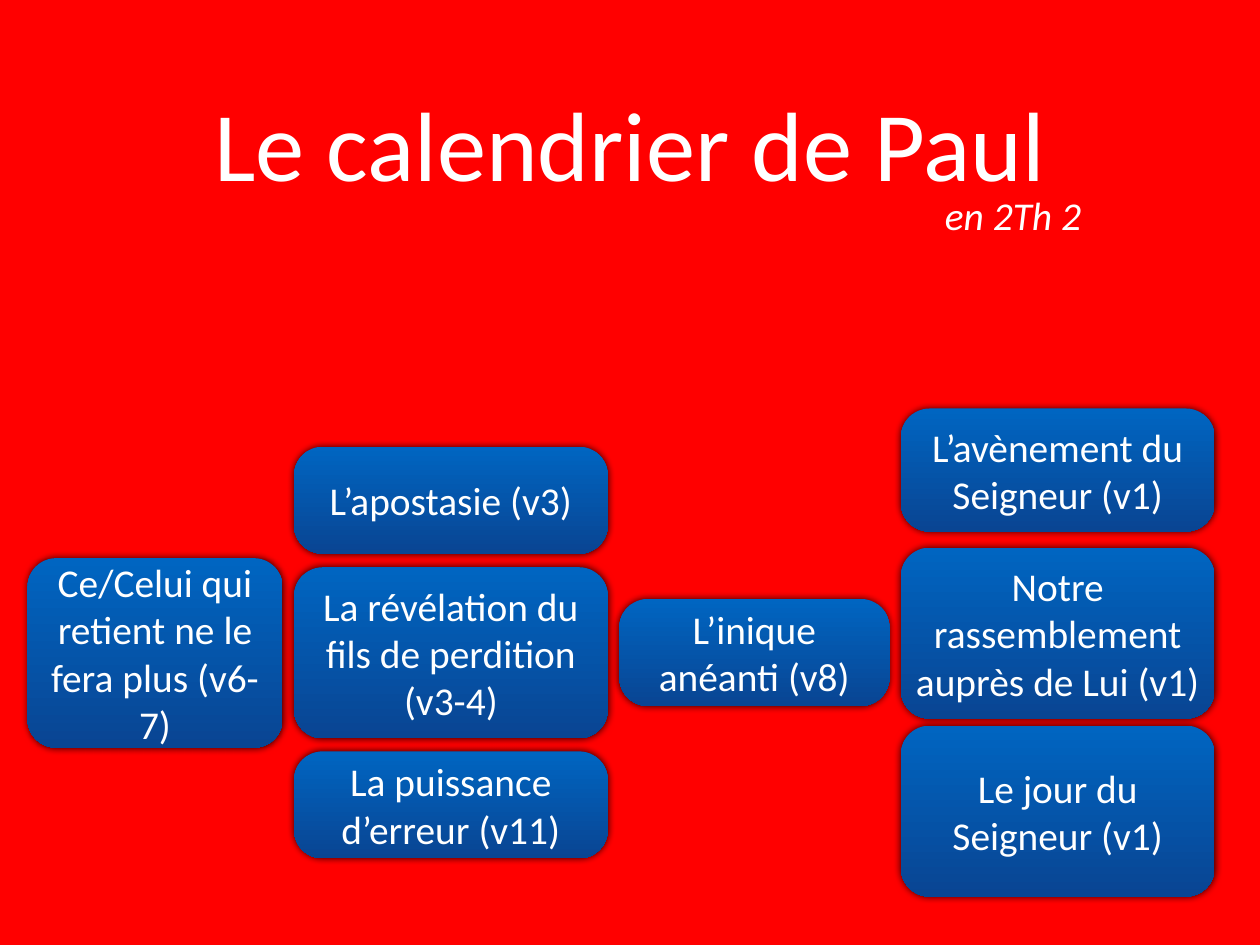
from lxml import etree
from pptx import Presentation
from pptx.dml.color import RGBColor
from pptx.enum.shapes import MSO_SHAPE
from pptx.enum.text import MSO_ANCHOR, MSO_AUTO_SIZE, PP_ALIGN
from pptx.oxml.ns import qn
from pptx.util import Pt

ROUNDED = MSO_SHAPE.ROUNDED_RECTANGLE
MIDDLE = MSO_ANCHOR.MIDDLE
CENTER = PP_ALIGN.CENTER
NO_AUTOFIT = MSO_AUTO_SIZE.NONE
TITLE_ONLY = 5

FONT = "Calibri"
RED, WHITE, BLACK = "FF0000", "FFFFFF", "000000"
EVENT_COLORS = ("0065C1", "094593")
CORNER_RADIUS = 23.3
INSET = 4.5

# Each stage: left, width, then its events as (top, height, text)
STAGES = [
    (732.2, 255, [
        (332, 100, "L’avènement du Seigneur (v1)"),
        (445, 139, "Notre rassemblement auprès de Lui (v1)"),
        (589.7, 139, "Le jour du Seigneur (v1)"),
    ]),
    (239, 255, [
        (363, 87, "L’apostasie (v3)"),
        (461, 139, "La révélation du fils de perdition (v3-4)"),
        (610.6, 87, "La puissance d’erreur (v11)"),
    ]),
    (22.3, 207.4, [(453.6, 154, "Ce/Celui qui retient ne le fera plus (v6-7)")]),
    (503.3, 219.6, [(486.7, 87, "L’inique anéanti (v8)")]),
]


def color(hex_code):
    return RGBColor.from_string(hex_code)


def write(shape, text, size, italic=False):
    frame = shape.text_frame
    frame.text = text
    frame.word_wrap = True
    frame.auto_size = NO_AUTOFIT
    frame.vertical_anchor = MIDDLE
    frame.margin_left = frame.margin_right = Pt(INSET)
    frame.margin_top = frame.margin_bottom = Pt(INSET)
    paragraph = frame.paragraphs[0]
    paragraph.alignment = CENTER
    font = paragraph.runs[0].font
    font.name = FONT
    font.size = Pt(size)
    font.italic = italic
    font.color.rgb = color(WHITE)


def add_glow_shadow(shape):
    shape.shadow.inherit = False
    effects = shape._element.spPr.find(qn("a:effectLst"))
    shadow = etree.SubElement(effects, qn("a:outerShdw"), blurRad=str(Pt(6)),
                              dist="0", dir="18900000", rotWithShape="0")
    shade = etree.SubElement(shadow, qn("a:srgbClr"), val=BLACK)
    etree.SubElement(shade, qn("a:alpha"), val="80000")


def add_event(slide, left, top, width, height, text):
    event = slide.shapes.add_shape(ROUNDED, Pt(left), Pt(top), Pt(width), Pt(height))
    event.adjustments[0] = CORNER_RADIUS / min(width, height)
    event.line.fill.background()
    event.fill.gradient()
    event.fill.gradient_angle = 270
    for position, (stop, shade) in enumerate(zip(event.fill.gradient_stops, EVENT_COLORS)):
        stop.position = position
        stop.color.rgb = color(shade)
    add_glow_shadow(event)
    write(event, text, 32)


def set_title(slide, text):
    title = slide.shapes.title
    title.left, title.top = Pt(75), Pt(31.7)
    title.width, title.height = Pt(874), Pt(167)
    write(title, text, 80)


def add_reference(slide, text):
    reference = slide.shapes.add_textbox(Pt(623.3), Pt(149), Pt(400), Pt(50.4))
    write(reference, text, 32, italic=True)


def main():
    prs = Presentation()
    prs.slide_width, prs.slide_height = Pt(1024), Pt(768)
    slide = prs.slides.add_slide(prs.slide_layouts[TITLE_ONLY])
    slide.background.fill.solid()
    slide.background.fill.fore_color.rgb = color(RED)

    # Heading
    set_title(slide, "Le calendrier de Paul")
    add_reference(slide, "en 2Th 2")

    # Calendar of events
    for left, width, events in STAGES:
        for top, height, text in events:
            add_event(slide, left, top, width, height, text)

    prs.save("out.pptx")


if __name__ == "__main__":
    main()
